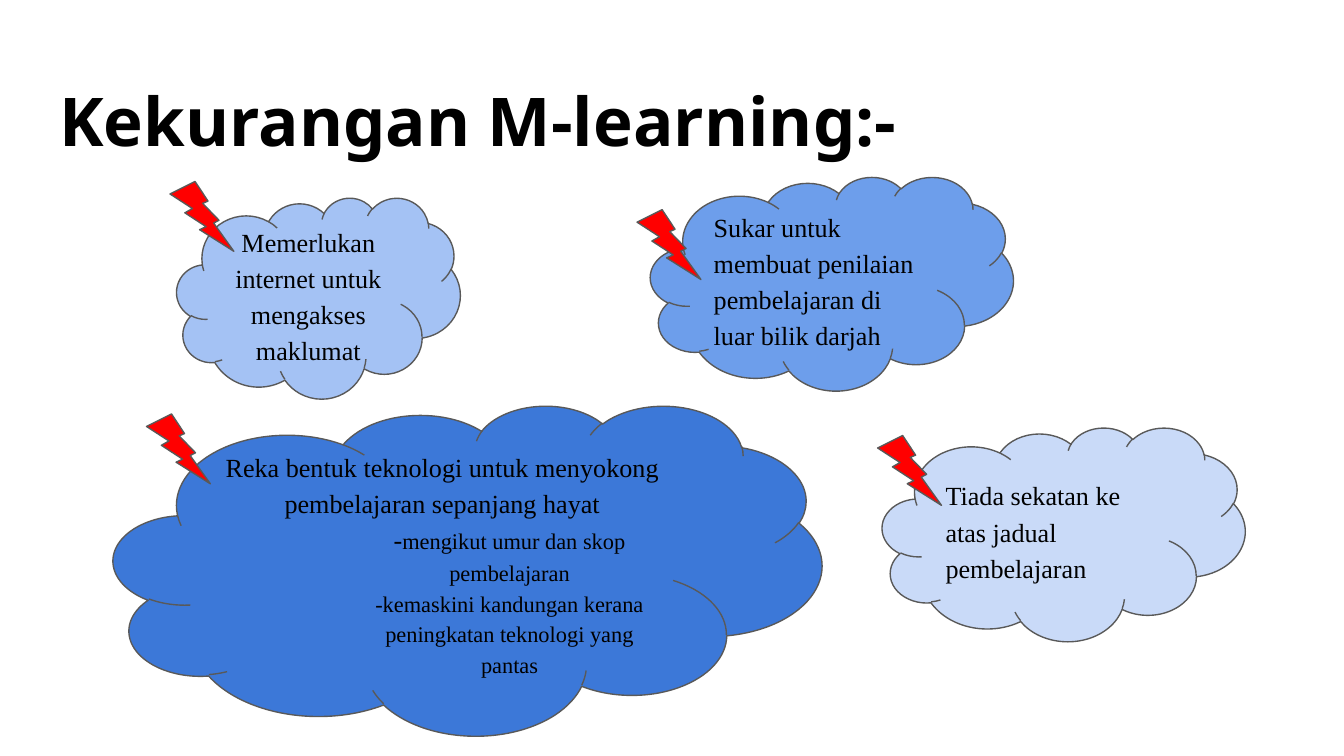
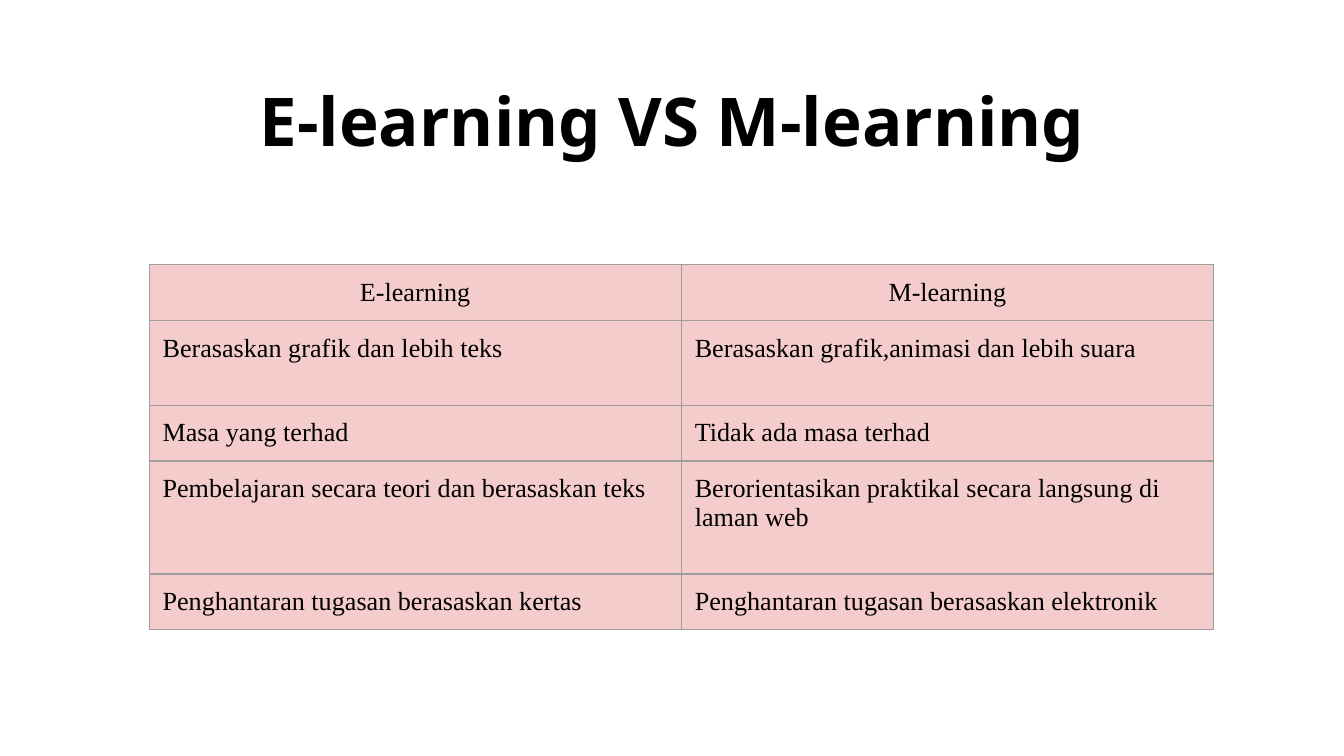
from lxml.etree import SubElement
from pptx import Presentation
from pptx.dml.color import RGBColor
from pptx.enum.shapes import MSO_SHAPE as Shape
from pptx.enum.text import MSO_ANCHOR as Anchor, MSO_AUTO_SIZE as AutoSize, PP_ALIGN as Align
from pptx.oxml.ns import qn
from pptx.util import Pt

PX = 4572
INSET = 20
SLIDE_SIZE = (2000, 1125)
TITLE_BOX = (68, 98, 1864, 126)
TITLE_FONT, BODY_FONT = "Noto Sans", "Times New Roman"
COLORS = {
    "text": "000000",
    "outline": "595959",
    "bolt": "FF0000",
    "cell": "F4CCCC",
    "border": "9E9E9E",
    "soft": "A4C2F4",
    "deep": "3C78D8",
    "medium": "6D9EEB",
    "pale": "C9DAF8",
}

WEAKNESS_TITLE = "Kekurangan M-learning:-"
CLOUDS = [
    {"box": (263, 294, 422, 299), "fill": "soft", "align": Align.CENTER,
     "points": ["Memerlukan internet untuk mengakses maklumat"]},
    {"box": (169, 603, 1054, 491), "fill": "deep", "align": Align.CENTER,
     "points": ["Reka bentuk teknologi untuk menyokong pembelajaran sepanjang hayat"],
     "details": [
         [("-", 14), ("mengikut umur dan skop pembelajaran", 12)],
         [("-kemaskini kandungan kerana peningkatan teknologi yang pantas", 12)],
     ]},
    {"box": (968, 263, 540, 318), "fill": "medium", "align": Align.LEFT,
     "points": ["Sukar untuk membuat penilaian pembelajaran di luar bilik darjah"]},
    {"box": (1313, 636, 540, 318), "fill": "pale", "align": Align.LEFT,
     "points": ["Tiada sekatan ke atas jadual pembelajaran"]},
]
BOLT_SIZE = (95, 104)
BOLTS = [(948, 312), (253, 270), (218, 616), (1306, 648)]
DETAIL_INDENT = 200

COMPARISON_TITLE = "E-learning VS M-learning"
TABLE_ORIGIN = (222, 394)
COLUMN_WIDTH = 792
ROWS = [
    (83, "E-learning", "M-learning"),
    (126, "Berasaskan grafik dan lebih teks", "Berasaskan grafik,animasi dan lebih suara"),
    (83, "Masa yang terhad", "Tidak ada masa terhad"),
    (168, "Pembelajaran secara teori dan berasaskan teks",
     "Berorientasikan praktikal secara langsung di laman web"),
    (83, "Penghantaran tugasan berasaskan kertas", "Penghantaran tugasan berasaskan elektronik"),
]


def emu(lengths):
    """Turn px lengths into EMU."""
    return [length * PX for length in lengths]


def rgb(name):
    """Look up a named colour."""
    return RGBColor.from_string(COLORS[name])


def set_insets(target):
    """Give a text frame or cell equal margins."""
    for side in ("left", "top", "right", "bottom"):
        setattr(target, f"margin_{side}", INSET * PX)


def write(frame, paragraphs, font=BODY_FONT, bold=False, align=Align.LEFT, spacing=None, indent=0):
    """Append paragraphs, each a list of (text, size) runs."""
    for runs in paragraphs:
        paragraph = frame.paragraphs[0] if not frame.text else frame.add_paragraph()
        paragraph.alignment = align
        if spacing:
            paragraph.line_spacing = spacing
        if indent:
            properties = paragraph._p.get_or_add_pPr()
            properties.set("marL", str(indent * PX))
            properties.set("indent", "0")
        for text, size in runs:
            run = paragraph.add_run()
            run.text = text
            run.font.size = Pt(size)
            run.font.name = font
            run.font.bold = bold
            run.font.color.rgb = rgb("text")


def add_titled_slide(presentation, title, align):
    """Add a title-only slide with the shared title style."""
    slide = presentation.slides.add_slide(presentation.slide_layouts[5])
    shape = slide.shapes.title
    shape.left, shape.top, shape.width, shape.height = emu(TITLE_BOX)
    frame = shape.text_frame
    frame.auto_size = AutoSize.NONE
    frame.vertical_anchor = Anchor.TOP
    set_insets(frame)
    write(frame, [[(title, 36)]], font=TITLE_FONT, bold=True, align=align)
    return slide


def add_outlined(slide, kind, box, fill):
    """Add a filled preset shape with the shared outline."""
    shape = slide.shapes.add_shape(kind, *emu(box))
    shape.shadow.inherit = False
    shape.fill.solid()
    shape.fill.fore_color.rgb = rgb(fill)
    shape.line.color.rgb = rgb("outline")
    shape.line.width = Pt(0.75)
    return shape


def add_cloud(slide, cloud):
    """Add a cloud with its points and indented details."""
    frame = add_outlined(slide, Shape.CLOUD, cloud["box"], cloud["fill"]).text_frame
    frame.word_wrap = True
    frame.vertical_anchor = Anchor.MIDDLE
    set_insets(frame)
    style = {"align": cloud["align"], "spacing": 1.15}
    write(frame, [[(point, 14)] for point in cloud["points"]], **style)
    write(frame, cloud.get("details", []), indent=DETAIL_INDENT, **style)


def format_cell(cell):
    """Set borders, fill and margins of a cell."""
    properties = cell._tc.get_or_add_tcPr()
    for side in ("L", "R", "T", "B"):
        line = SubElement(properties, qn(f"a:ln{side}"), w=str(Pt(0.75)))
        SubElement(SubElement(line, qn("a:solidFill")), qn("a:srgbClr"), val=COLORS["border"])
    cell.fill.solid()
    cell.fill.fore_color.rgb = rgb("cell")
    set_insets(cell)


def add_comparison(slide):
    """Add the comparison table."""
    columns = len(ROWS[0]) - 1
    size = (columns * COLUMN_WIDTH, sum(row[0] for row in ROWS))
    table = slide.shapes.add_table(len(ROWS), columns, *emu(TABLE_ORIGIN + size)).table
    table.first_row = table.horz_banding = False
    for row_index, (height, *texts) in enumerate(ROWS):
        table.rows[row_index].height = height * PX
        for column_index, text in enumerate(texts):
            cell = table.cell(row_index, column_index)
            format_cell(cell)
            align = Align.LEFT if row_index else Align.CENTER
            write(cell.text_frame, [[(text, 14)]], align=align)


def main():
    """Build and save both slides."""
    presentation = Presentation()
    presentation.slide_width, presentation.slide_height = emu(SLIDE_SIZE)
    slide = add_titled_slide(presentation, WEAKNESS_TITLE, Align.LEFT)
    for cloud in CLOUDS:
        add_cloud(slide, cloud)
    for origin in BOLTS:
        add_outlined(slide, Shape.LIGHTNING_BOLT, origin + BOLT_SIZE, "bolt")
    add_comparison(add_titled_slide(presentation, COMPARISON_TITLE, Align.CENTER))
    presentation.save("out.pptx")


if __name__ == "__main__":
    main()
